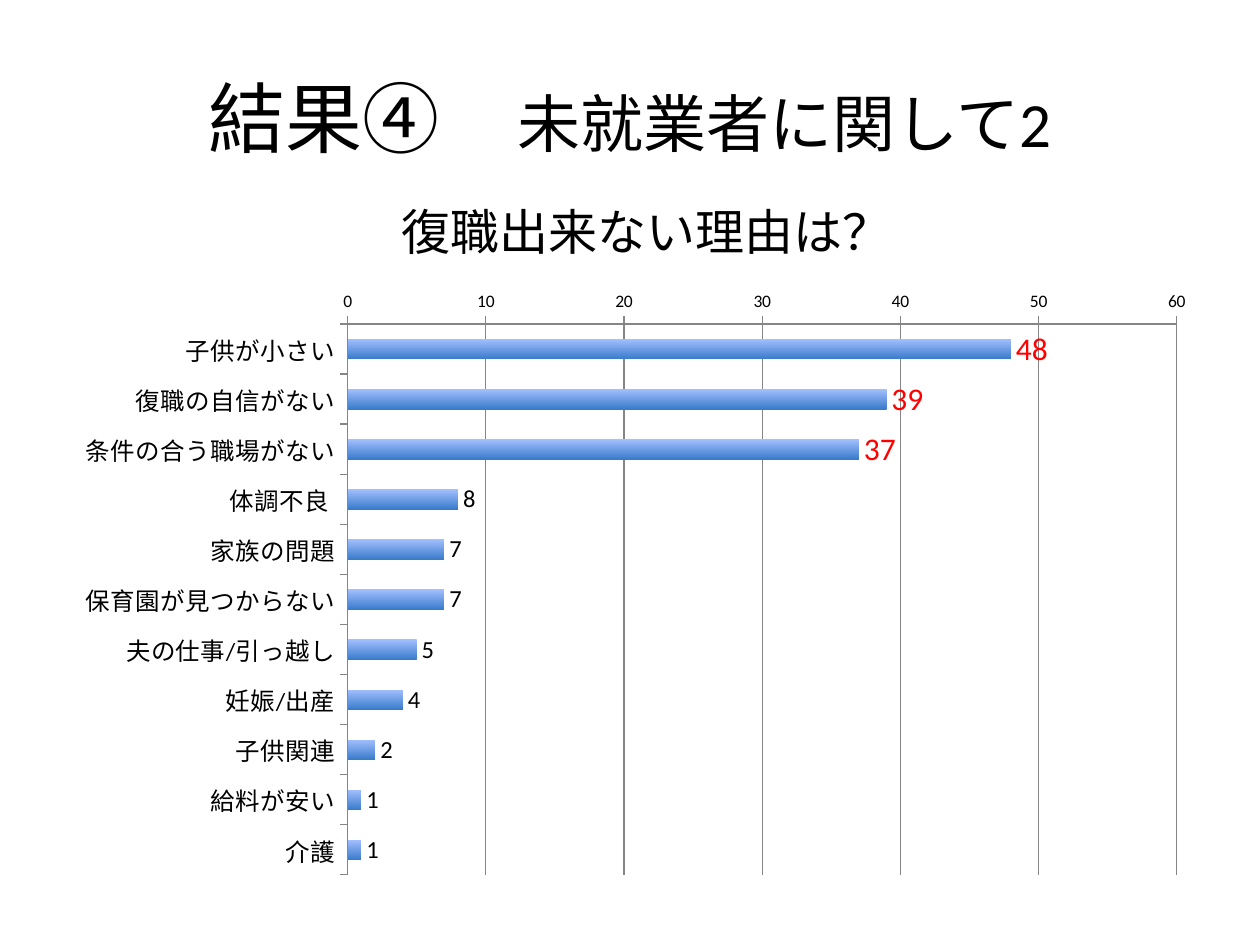
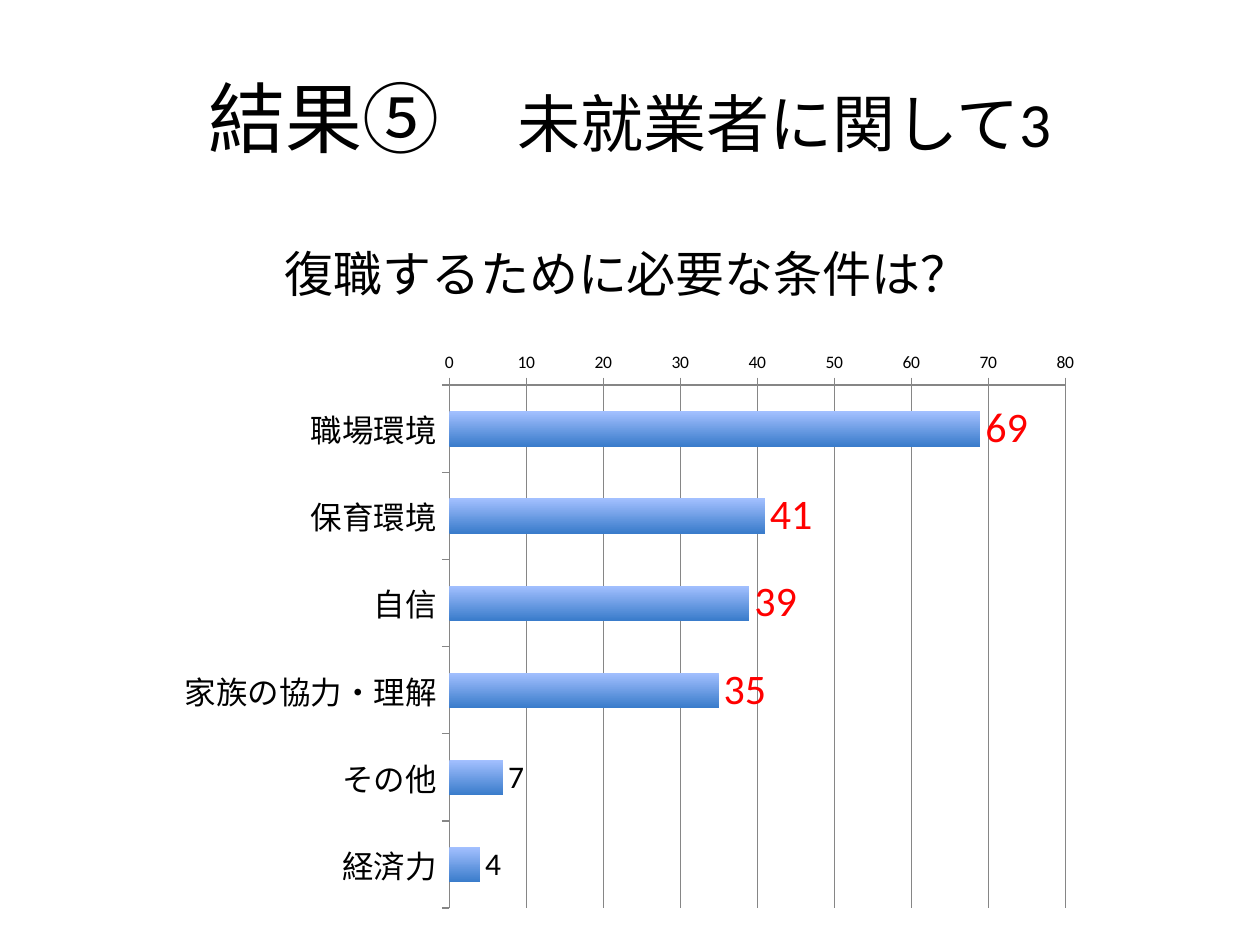
from dataclasses import dataclass

from pptx import Presentation
from pptx import util as u
from pptx.chart.data import CategoryChartData
from pptx.dml.color import RGBColor
from pptx.enum import chart as ch
from pptx.enum import text

COLORS = {"ink": "000000", "stress": "FF0000", "grid": "868686",
          "bar_top": "A3C0FF", "bar_bottom": "3A7CCB"}
FONT = "Calibri"
COLUMNS, ROWS = 100, 75

deck = Presentation()
deck.slide_width, deck.slide_height = u.Inches(10), u.Inches(7.5)


@dataclass
class Box:
    column: float
    row: float
    columns: float
    rows: float

    def lengths(self) -> tuple[int, ...]:
        column, row = deck.slide_width / COLUMNS, deck.slide_height / ROWS
        return (round(self.column * column), round(self.row * row),
                round(self.columns * column), round(self.rows * row))


@dataclass
class Survey:
    result: str
    subject: str
    question: str
    question_box: Box
    chart_box: Box
    answers: dict[str, int]
    axis_max: int
    label_size: int
    stressed: int
    stress_size: int


TITLE_BOX = Box(5, 3, 90, 12.5)
SURVEYS = [
    Survey("結果④　", "未就業者に関して2", "復職出来ない理由は？",
           Box(30.9, 15.5, 41.4, 5.7), Box(5, 22.2, 90.9, 48.2),
           {"子供が小さい": 48, "復職の自信がない": 39, "条件の合う職場がない": 37,
            "体調不良 ": 8, "家族の問題": 7, "保育園が見つからない": 7,
            "夫の仕事/引っ越し": 5, "妊娠/出産": 4, "子供関連": 2,
            "給料が安い": 1, "介護": 1},
           axis_max=60, label_size=14, stressed=3, stress_size=18),
    Survey("結果⑤　", "未就業者に関して3", "復職するために必要な条件は？",
           Box(21.6, 18.8, 55.3, 5.7), Box(13.2, 27.1, 73.5, 45.9),
           {"職場環境": 69, "保育環境": 41, "自信": 39,
            "家族の協力・理解": 35, "その他": 7, "経済力": 4},
           axis_max=80, label_size=18, stressed=4, stress_size=24),
]


def color(name: str) -> RGBColor:
    return RGBColor.from_string(COLORS[name])


def style(font, size: float, ink: str = "ink") -> None:
    font.name, font.size = FONT, u.Pt(size)
    font.color.rgb = color(ink)


def add_title(slide, survey: Survey) -> None:
    title = slide.shapes.title
    title.left, title.top, title.width, title.height = TITLE_BOX.lengths()
    title.text_frame.vertical_anchor = text.MSO_ANCHOR.MIDDLE
    heading = title.text_frame.paragraphs[0]
    heading.alignment = text.PP_ALIGN.CENTER
    style(heading.font, 44)
    for words, size in ((survey.result, 44), (survey.subject, 36)):
        part = heading.add_run()
        part.text = words
        part.font.size = u.Pt(size)


def add_question(slide, survey: Survey) -> None:
    frame = slide.shapes.add_textbox(*survey.question_box.lengths()).text_frame
    frame.word_wrap = True
    frame.auto_size = text.MSO_AUTO_SIZE.SHAPE_TO_FIT_TEXT
    question = frame.paragraphs[0]
    question.text = survey.question
    style(question.font, 28)


def style_axes(chart, survey: Survey) -> None:
    answers, counts = chart.category_axis, chart.value_axis
    answers.reverse_order = True
    counts.minimum_scale, counts.maximum_scale = 0, survey.axis_max
    counts.major_unit = 10
    counts.has_major_gridlines = True
    for axis, size in ((answers, survey.label_size), (counts, 10)):
        axis.major_tick_mark = ch.XL_TICK_MARK.OUTSIDE
        axis.minor_tick_mark = ch.XL_TICK_MARK.NONE
        style(axis.tick_labels.font, size)
    for rule in (answers.format.line, counts.format.line,
                 counts.major_gridlines.format.line):
        rule.color.rgb = color("grid")
        rule.width = u.Pt(0.75)


def style_bars(plot, survey: Survey) -> None:
    plot.gap_width = 150
    plot.vary_by_categories = False
    bars = plot.series[0]
    bars.invert_if_negative = False
    fill = bars.format.fill
    fill.gradient()
    fill.gradient_angle = 270
    for stop, shade in zip(fill.gradient_stops, ("bar_top", "bar_bottom")):
        stop.color.rgb = color(shade)

    labels = bars.data_labels
    labels.show_value = True
    labels.position = ch.XL_LABEL_POSITION.OUTSIDE_END
    style(labels.font, survey.label_size)
    for rank in range(survey.stressed):
        label = bars.points[rank].data_label
        style(label.font, survey.stress_size, "stress")
        label.position = ch.XL_LABEL_POSITION.OUTSIDE_END


def add_answers(slide, survey: Survey) -> None:
    data = CategoryChartData()
    data.categories = list(survey.answers)
    data.add_series("Series 1", list(survey.answers.values()))
    chart = slide.shapes.add_chart(ch.XL_CHART_TYPE.BAR_CLUSTERED,
                                   *survey.chart_box.lengths(), data).chart
    chart.has_legend = chart.has_title = False
    style(chart.font, 10)
    style_axes(chart, survey)
    style_bars(chart.plots[0], survey)


def main() -> None:
    for survey in SURVEYS:
        slide = deck.slides.add_slide(deck.slide_layouts.get_by_name("Title Only"))
        add_title(slide, survey)
        add_question(slide, survey)
        add_answers(slide, survey)
    deck.save("out.pptx")


if __name__ == "__main__":
    main()
